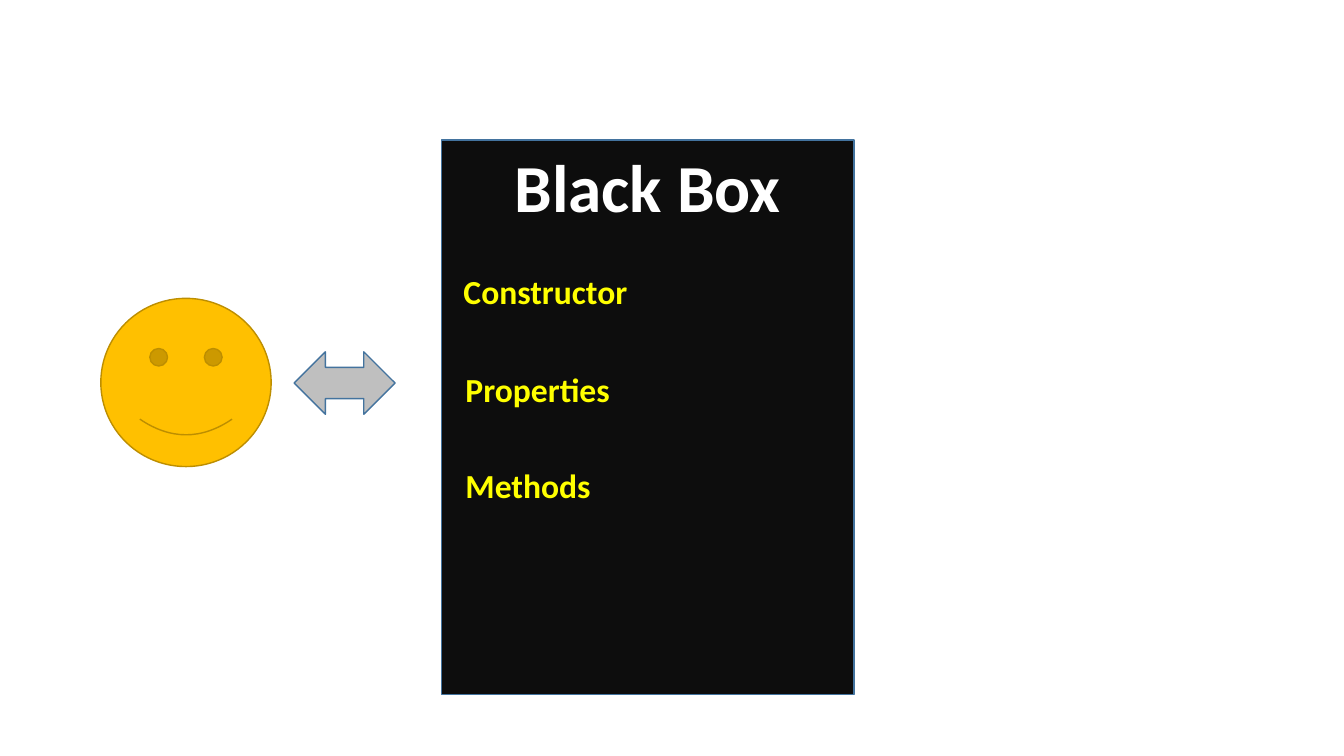
from pptx import Presentation, util as u
from pptx.dml.color import RGBColor
from pptx.enum import shapes, text

COLORS = {
    "box": "0D0D0D", "face": "FFC000", "arrow": "BFBFBF",
    "blue line": "43739E", "gold line": "BD8E00",
    "heading": "FFFFFF", "member": "FFFF00",
}


def add_figure(kind, left, top, width, height, fill, line):
    figure = slide.shapes.add_shape(kind, u.Pt(left), u.Pt(top), u.Pt(width), u.Pt(height))
    figure.shadow.inherit = False
    figure.fill.solid()
    figure.fill.fore_color.rgb = RGBColor.from_string(COLORS[fill])
    figure.line.color.rgb = RGBColor.from_string(COLORS[line])
    figure.line.width = u.Pt(1)
    return figure


def add_words(para, words, size, color):
    span = para.add_run()
    span.text = words
    span.font.name = "Calibri"
    span.font.size = u.Pt(size)
    span.font.bold = True
    span.font.color.rgb = RGBColor.from_string(COLORS[color])


deck = Presentation()
deck.slide_width, deck.slide_height = u.Pt(960), u.Pt(540)
page = deck.slide_layouts[6]
slide = deck.slides.add_slide(page)

# Black box with its heading
box = add_figure(shapes.MSO_SHAPE.RECTANGLE, 315.4, 100.1, 294.5, 396, "box", "blue line")
box.text_frame.vertical_anchor = text.MSO_ANCHOR.TOP
heading = box.text_frame.paragraphs[0]
heading.alignment = text.PP_ALIGN.CENTER
add_words(heading, "Black Box", 48, "heading")

# User and the exchange with the box
add_figure(shapes.MSO_SHAPE.SMILEY_FACE, 72, 213.1, 121.7, 120.2, "face", "gold line")
add_figure(shapes.MSO_SHAPE.LEFT_RIGHT_ARROW, 210.2, 251.3, 72, 44.6, "arrow", "blue line")

# Members of the class
members = [
    ("Constructor", 324, 190.1, 132.5),
    ("Properties", 325.4, 259.9, 118.8),
    ("Methods", 325.4, 328.3, 105.1),
]
for name, left, top, width in members:
    label = slide.shapes.add_textbox(u.Pt(left), u.Pt(top), u.Pt(width), u.Pt(36))
    label.text_frame.word_wrap = False
    label.text_frame.auto_size = text.MSO_AUTO_SIZE.SHAPE_TO_FIT_TEXT
    add_words(label.text_frame.paragraphs[0], name, 24, "member")

deck.save("out.pptx")
